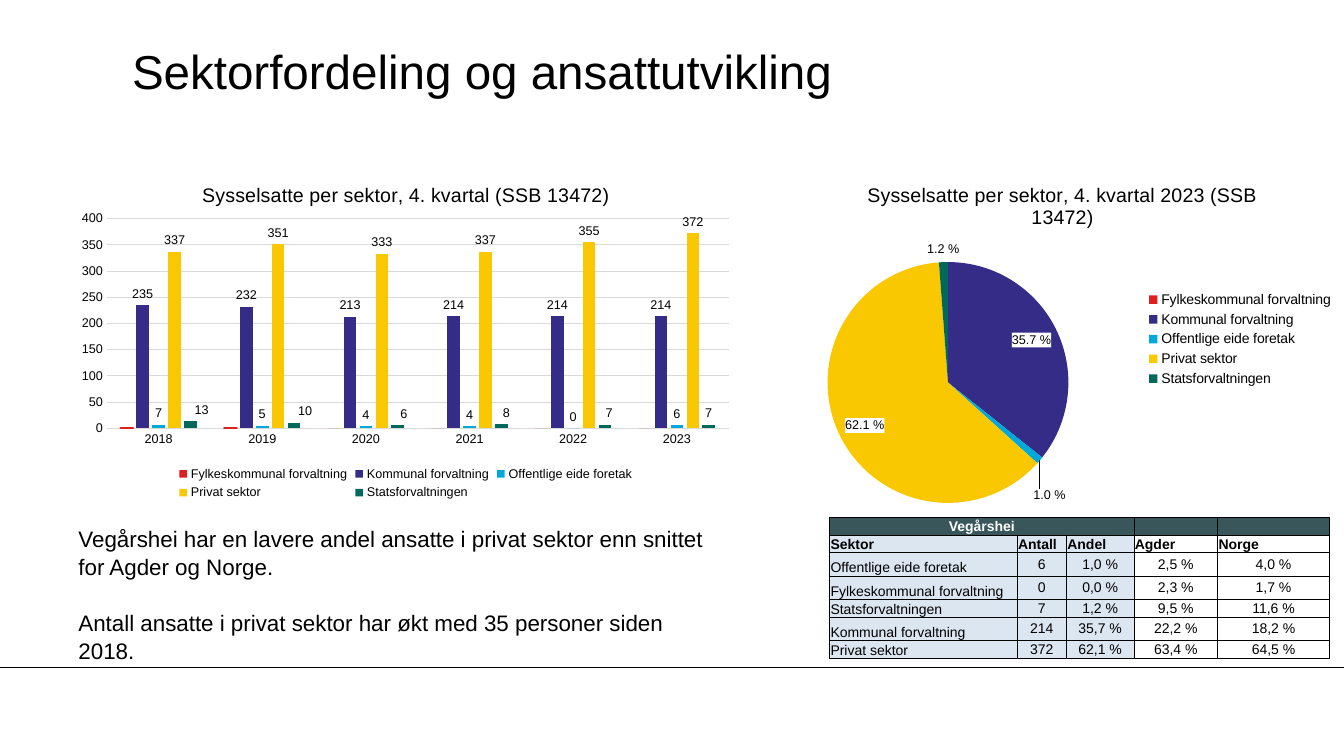
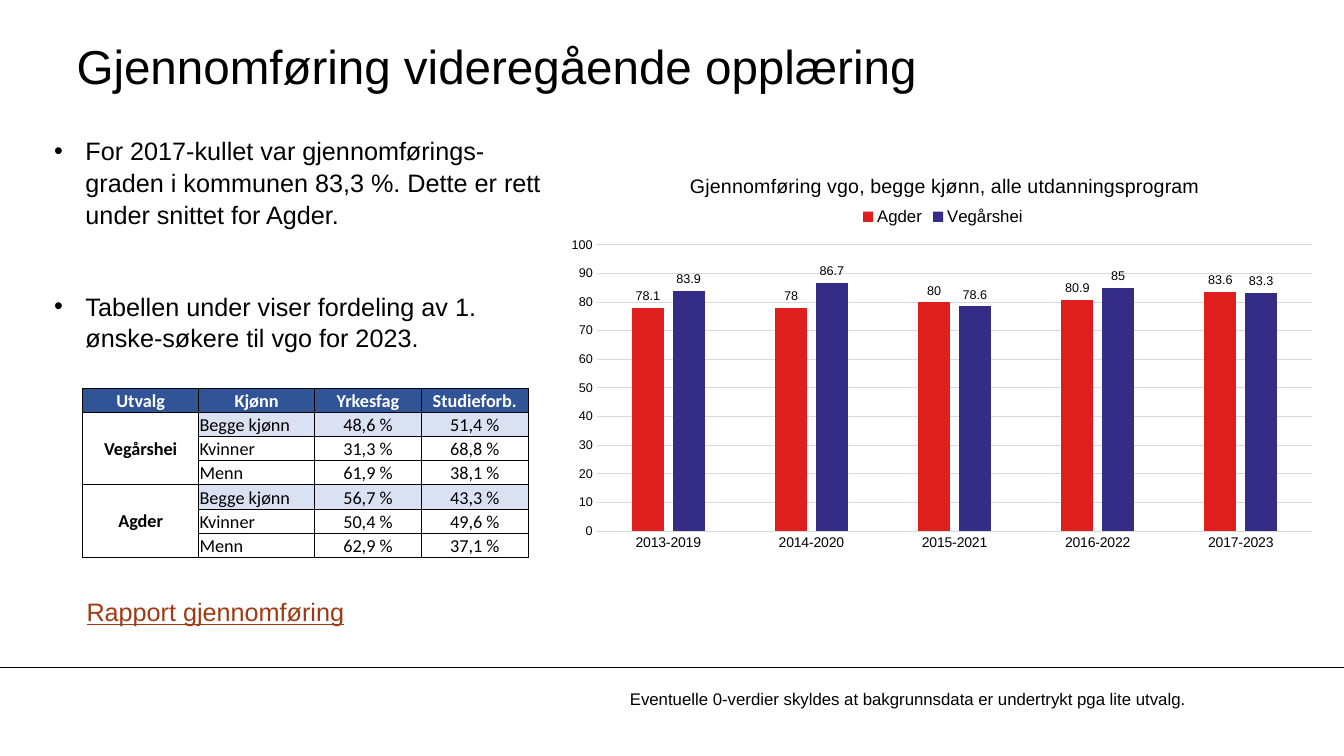
from lxml import etree
from pptx import Presentation
from pptx.chart.data import CategoryChartData
from pptx.dml.color import RGBColor
from pptx.enum.chart import XL_CHART_TYPE, XL_LABEL_POSITION, XL_LEGEND_POSITION, XL_TICK_MARK
from pptx.enum.shapes import MSO_CONNECTOR
from pptx.enum.text import MSO_ANCHOR, MSO_AUTO_SIZE, PP_ALIGN
from pptx.oxml.ns import qn
from pptx.util import Pt

PX = 9144  # 100 px to the inch
COLUMNS, PIE = XL_CHART_TYPE.COLUMN_CLUSTERED, XL_CHART_TYPE.PIE
OUTSIDE, INSIDE = XL_LABEL_POSITION.OUTSIDE_END, XL_LABEL_POSITION.INSIDE_END
LEGEND_TOP, LEGEND_RIGHT, LEGEND_BOTTOM = (
    XL_LEGEND_POSITION.TOP, XL_LEGEND_POSITION.RIGHT, XL_LEGEND_POSITION.BOTTOM)
NO_TICK = XL_TICK_MARK.NONE
MIDDLE, BOTTOM = MSO_ANCHOR.MIDDLE, MSO_ANCHOR.BOTTOM
LEFT, CENTER = PP_ALIGN.LEFT, PP_ALIGN.CENTER

FONT = "Arial"
BLACK, WHITE, GRID = "000000", "FFFFFF", "D9D9D9"
RED, INDIGO, BLUE, YELLOW, GREEN = "DF1F1D", "342C86", "00A9DA", "FAC800", "00695A"
SECTOR_COLORS = [RED, INDIGO, BLUE, YELLOW, GREEN]
color = RGBColor.from_string


def write_run(paragraph, text, size, hex_color=BLACK, font=FONT, bold=False, underline=False):
    run = paragraph.add_run()
    run.text = text
    run.font.size, run.font.name = Pt(size), font
    run.font.bold, run.font.underline = bold, underline
    run.font.color.rgb = color(hex_color)


def set_layout(parent, index, frame, left, top, size=None, mode="edge"):
    """Place a chart part; left and top are slide px, or offsets when mode is factor."""
    for old in parent.findall(qn("c:layout")):
        parent.remove(old)
    layout = etree.Element(qn("c:layout"))
    manual = etree.SubElement(layout, qn("c:manualLayout"))
    frame_left, frame_top, frame_width, frame_height = frame
    if mode == "factor":
        frame_left = frame_top = 0
    values = []
    if size:
        values.append(("layoutTarget", "inner"))
    if mode == "edge":
        values += [("xMode", mode), ("yMode", mode)]
    values += [("x", (left - frame_left) / frame_width), ("y", (top - frame_top) / frame_height)]
    if size:
        values += [("w", size[0] / frame_width), ("h", size[1] / frame_height)]
    for tag, value in values:
        etree.SubElement(manual, qn("c:" + tag)).set("val", str(value))
    parent.insert(index, layout)


prs = Presentation()
prs.slide_width, prs.slide_height = 12192000, 750 * PX
title_only = prs.slide_layouts[5]

# Titles
slides = []
for title_text, left, top in [
    ("Sektorfordeling og ansattutvikling", 131, 32),
    ("Gjennomføring videregående opplæring", 76, 27),
]:
    slide = prs.slides.add_slide(title_only)
    slides.append(slide)
    title = slide.shapes.title
    title.left, title.top, title.width, title.height = left * PX, top * PX, 1110 * PX, 75 * PX
    frame = title.text_frame
    frame.margin_left = frame.margin_right = frame.margin_top = frame.margin_bottom = 0
    frame.vertical_anchor = MIDDLE
    frame.auto_size = MSO_AUTO_SIZE.NONE
    frame.paragraphs[0].alignment = LEFT
    write_run(frame.paragraphs[0], title_text, 34)
sector_slide, school_slide = slides

# Footer rule, moved to the shared layout
rule = sector_slide.shapes.add_connector(MSO_CONNECTOR.STRAIGHT, 0, 662 * PX, prs.slide_width, 662 * PX)
rule.line.color.rgb = color(BLACK)
rule.line.width = Pt(0.75)
etree.SubElement(rule._element.spPr, qn("a:effectLst"))
title_only.shapes._spTree.append(rule._element)

# Text boxes: slide, box, size, colour, underline, bullets, line spacing, gap, paragraphs
for slide, box, size, ink, underline, bullets, spacing, gap, texts in [
    (sector_slide, (68, 515, 641, 145), 16, BLACK, False, False, 1.05, 19.5, [
        "Vegårshei har en lavere andel ansatte i privat sektor enn snittet for Agder og Norge.",
        "Antall ansatte i privat sektor har økt med 35 personer siden 2018."]),
    (school_slide, (44, 128, 517, 222), 18, BLACK, False, True, 1.05, 43, [
        "For 2017-kullet var gjennomførings-graden i kommunen 83,3 %. "
        "Dette er rett under snittet for Agder.",
        "Tabellen under viser fordeling av 1. ønske-søkere til vgo for 2023."]),
    (school_slide, (615, 678, 585, 30), 12, BLACK, False, False, 1.0, 0, [
        "Eventuelle 0-verdier skyldes at bakgrunnsdata er undertrykt pga lite utvalg."]),
    (school_slide, (76, 587, 281, 40), 18, "9F3A14", True, False, 1.0, 0, ["Rapport gjennomføring"]),
]:
    frame = slide.shapes.add_textbox(*[n * PX for n in box]).text_frame
    frame.word_wrap = True
    for i, text in enumerate(texts):
        paragraph = frame.add_paragraph() if i else frame.paragraphs[0]
        paragraph.line_spacing = spacing
        if i:
            paragraph.space_before = Pt(gap)
        if bullets:
            props = paragraph._p.get_or_add_pPr()
            props.set("marL", str(31 * PX))
            props.set("indent", str(-31 * PX))
            etree.SubElement(props, qn("a:buFont")).set("typeface", FONT)
            etree.SubElement(props, qn("a:buChar")).set("char", "•")
        write_run(paragraph, text, size, ink, underline=underline)

# Tables
sector_rows = [
    ["Vegårshei", "", "", "", ""],
    ["Sektor", "Antall", "Andel", "Agder", "Norge"],
    ["Offentlige eide foretak", "6", "1,0 %", "2,5 %", "4,0 %"],
    ["Fylkeskommunal forvaltning", "0", "0,0 %", "2,3 %", "1,7 %"],
    ["Statsforvaltningen", "7", "1,2 %", "9,5 %", "11,6 %"],
    ["Kommunal forvaltning", "214", "35,7 %", "22,2 %", "18,2 %"],
    ["Privat sektor", "372", "62,1 %", "63,4 %", "64,5 %"],
]
school_rows = [
    ["Utvalg", "Kjønn", "Yrkesfag", "Studieforb."],
    ["Vegårshei", "Begge kjønn", "48,6 %", "51,4 %"],
    ["", "Kvinner", "31,3 %", "68,8 %"],
    ["", "Menn", "61,9 %", "38,1 %"],
    ["Agder", "Begge kjønn", "56,7 %", "43,3 %"],
    ["", "Kvinner", "50,4 %", "49,6 %"],
    ["", "Menn", "62,9 %", "37,1 %"],
]
for slide, corner, widths, heights, rows, merges, font, size, head_fill in [
    (sector_slide, (823, 513), [186, 49, 67, 83, 111], [17, 17, 23, 23, 17, 23, 17],
     sector_rows, [(0, 0, 0, 2)], FONT, 10, "39575B"),
    (school_slide, (82, 385), [115, 115, 106, 106], [24] * 7,
     school_rows, [(1, 0, 3, 0), (4, 0, 6, 0)], "Calibri", 13, "305496"),
]:
    sectors = slide is sector_slide
    table = slide.shapes.add_table(
        len(rows), len(widths), corner[0] * PX, corner[1] * PX,
        sum(widths) * PX, sum(heights) * PX).table
    table.first_row = table.horz_banding = False
    for column, width in zip(table.columns, widths):
        column.width = width * PX
    for row, height in zip(table.rows, heights):
        row.height = height * PX
    for r, texts in enumerate(rows):
        for c, text in enumerate(texts):
            cell = table.cell(r, c)
            # Look of the cell
            if sectors:
                fill = "DCE6F1" if c < 3 else None
                bold = r < 2
                centred = r == 0 or (r > 1 and c > 0)
                anchor = MIDDLE if r > 1 and c > 0 else BOTTOM
            else:
                fill = "D9E1F2" if c and r in (1, 4) else WHITE
                bold = r == 0 or c == 0
                centred = r == 0 or c != 1
                anchor = MIDDLE if r and c == 0 else BOTTOM
            if r == 0:
                fill = head_fill
            cell.margin_left = cell.margin_right = cell.margin_top = PX
            cell.margin_bottom = 0
            cell.vertical_anchor = anchor
            # Borders precede the fill
            props = cell._tc.get_or_add_tcPr()
            for side in ("lnL", "lnR", "lnT", "lnB"):
                border = etree.SubElement(props, qn("a:" + side), w=str(Pt(0.5)))
                solid = etree.SubElement(border, qn("a:solidFill"))
                etree.SubElement(solid, qn("a:srgbClr")).set("val", BLACK)
            if fill:
                cell.fill.solid()
                cell.fill.fore_color.rgb = color(fill)
            else:
                cell.fill.background()
            paragraph = cell.text_frame.paragraphs[0]
            paragraph.alignment = CENTER if centred else LEFT
            if text:
                write_run(paragraph, text, size, BLACK if r else WHITE, font, bold)
            else:
                paragraph._p.get_or_add_endParaRPr().set("sz", str(size * 100))
    for top, left, bottom, right in merges:
        table.cell(top, left).merge(table.cell(bottom, right))

# Charts
sectors = ["Fylkeskommunal forvaltning", "Kommunal forvaltning", "Offentlige eide foretak",
           "Privat sektor", "Statsforvaltningen"]
employed = [[0, 0, 0, 0, 0, 0], [235, 232, 213, 214, 214, 214], [7, 5, 4, 4, 0, 6],
            [337, 351, 333, 337, 355, 372], [13, 10, 6, 8, 7, 7]]
employed_box, share_box, completion_box = (68, 160, 669, 340), (768, 160, 565, 353), (552, 148, 767, 406)
charts = []
for slide, kind, box, title_text, title_at, plot_at, plot_size, legend, legend_size, cats, series in [
    (sector_slide, COLUMNS, employed_box, "Sysselsatte per sektor, 4. kvartal (SSB 13472)",
     (197, 177), (106, 217), (617, 208), LEGEND_BOTTOM, 9,
     ["2018", "2019", "2020", "2021", "2022", "2023"], list(zip(sectors, employed))),
    (sector_slide, PIE, share_box, "Sysselsatte per sektor, 4. kvartal 2023 (SSB 13472)",
     (857, 177), (821, 260), (239, 239), LEGEND_RIGHT, 10,
     sectors, [("Series 1", [0, 35.7, 1, 62.1, 1.2])]),
    (school_slide, COLUMNS, completion_box, "Gjennomføring vgo, begge kjønn, alle utdanningsprogram",
     (681, 168), (592, 243), (710, 284), LEGEND_TOP, 12,
     ["2013-2019", "2014-2020", "2015-2021", "2016-2022", "2017-2023"],
     [("Agder", [78.1, 78, 80, 80.9, 83.6]), ("Vegårshei", [83.9, 86.7, 78.6, 85, 83.3])]),
]:
    data = CategoryChartData()
    data.categories = cats
    for name, values in series:
        data.add_series(name, values)
    chart = slide.shapes.add_chart(kind, *[n * PX for n in box], data).chart
    charts.append(chart)
    chart.font.size, chart.font.name = Pt(10), FONT
    chart.font.color.rgb = color(BLACK)
    chart.has_title = True
    write_run(chart.chart_title.text_frame.paragraphs[0], title_text, 14)
    set_layout(chart.chart_title._element, 1, box, *title_at)
    set_layout(chart._chartSpace.chart.plotArea, 0, box, *plot_at, plot_size)
    chart.has_legend = True
    chart.legend.position = legend
    chart.legend.include_in_layout = False
    chart.legend.font.size, chart.legend.font.name = Pt(legend_size), FONT
    plot = chart.plots[0]
    plot.vary_by_categories = kind == PIE
    for i, one in enumerate(plot.series):
        if kind == COLUMNS:
            one.format.fill.solid()
            one.format.fill.fore_color.rgb = color(SECTOR_COLORS[i])
            one.invert_if_negative = False
        if any(one.values):
            labels = one.data_labels
            labels.show_value = kind == COLUMNS
            labels.show_percentage = kind == PIE
            labels.position = OUTSIDE if kind == COLUMNS else INSIDE
            labels.font.size, labels.font.name = Pt(9), FONT
            labels.font.color.rgb = color(BLACK)
    if kind == COLUMNS:
        plot.gap_width, plot.overlap = 219, -27
        top_value, step = (400, 50) if slide is sector_slide else (100, 10)
        years, amounts = chart.category_axis, chart.value_axis
        amounts.minimum_scale, amounts.maximum_scale, amounts.major_unit = 0, top_value, step
        amounts.tick_labels.number_format = "#,##0"
        amounts.tick_labels.number_format_is_linked = False
        amounts.format.line.fill.background()
        for axis, axis_size in ((years, legend_size if slide is sector_slide else 10), (amounts, 9)):
            axis.major_tick_mark = axis.minor_tick_mark = NO_TICK
            axis.tick_labels.font.size, axis.tick_labels.font.name = Pt(axis_size), FONT
        for line in (years.format.line, amounts.major_gridlines.format.line):
            line.color.rgb = color(GRID)
            line.width = Pt(0.75)
employed_chart, share_chart, completion_chart = charts

# Employment: outlined first bars, and state labels moved right
county, *_, state = employed_chart.plots[0].series
for i in (0, 1):
    outline = county.points[i].format.line
    outline.color.rgb = color(RED)
    outline.width = Pt(1.5)
    county.points[i].format.fill.solid()
    county.points[i].format.fill.fore_color.rgb = color(RED)
for i, shift in enumerate([11, 11, 6, 5, 4]):
    label = state.points[i].data_label
    label.font.size, label.font.name = Pt(9), FONT
    label.position = OUTSIDE
    set_layout(label._dLbl, 1, employed_box, shift, 0, mode="factor")

# Shares: slice colours, white label boxes, small slices labelled outside
shares = share_chart.plots[0].series[0]
for i, hex_color in enumerate(SECTOR_COLORS):
    shares.points[i].format.fill.solid()
    shares.points[i].format.fill.fore_color.rgb = color(hex_color)
share_labels = shares.data_labels
share_labels.number_format = "0.0\\ %"
share_labels.number_format_is_linked = False
label_box = etree.Element(qn("c:spPr"))
solid = etree.SubElement(label_box, qn("a:solidFill"))
etree.SubElement(solid, qn("a:srgbClr")).set("val", WHITE)
share_labels._element.find(qn("c:numFmt")).addnext(label_box)
for i, shift in ((2, (-11, 24)), (4, (0, 0))):
    label = shares.points[i].data_label
    label.font.size, label.font.name = Pt(9), FONT
    label.position = OUTSIDE
    node = label._dLbl
    node.find(qn("c:showVal")).set("val", "0")
    node.find(qn("c:showPercent")).set("val", "1")
    node.insert(1, etree.Element(qn("c:numFmt"), formatCode="0.0\\ %", sourceLinked="0"))
    if any(shift):
        set_layout(node, 1, share_box, *shift, mode="factor")
empty_label = etree.Element(qn("c:dLbl"))
for tag, value in (("idx", "0"), ("delete", "1")):
    etree.SubElement(empty_label, qn("c:" + tag)).set("val", value)
share_labels._element.insert(0, empty_label)

prs.save("out.pptx")
